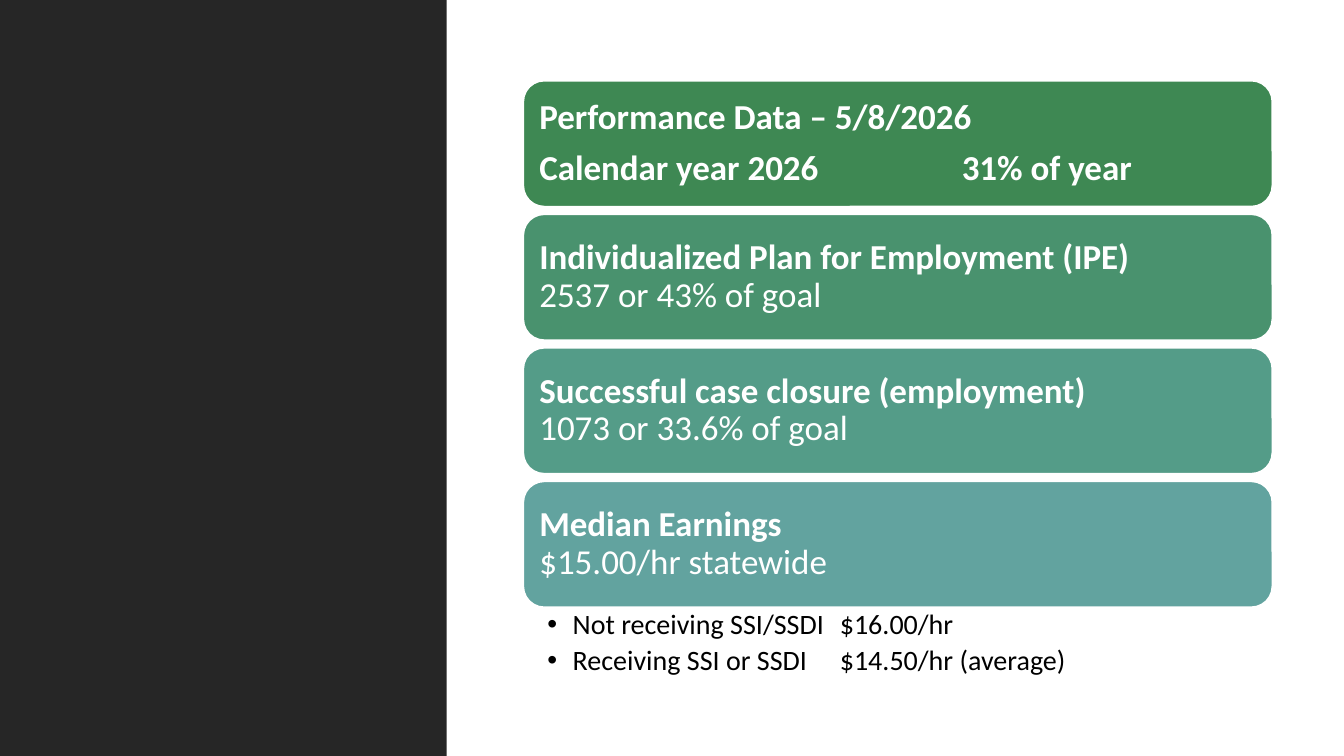
"""Build the performance data slide with its four stacked result cards."""
from dataclasses import dataclass

from lxml import etree
from pptx import Presentation
from pptx.dml.color import RGBColor
from pptx.enum.shapes import MSO_SHAPE as Preset
from pptx.enum.text import MSO_ANCHOR as Anchor, PP_ALIGN as Align
from pptx.oxml.ns import qn
from pptx.util import Inches, Pt

FONT = "Calibri"
WHITE, BLACK, CHARCOAL = "FFFFFF", "000000", "262626"
CARD_LEFT, CARD_TOP, CARD_WIDTH, CARD_HEIGHT = 5.19, 0.8, 7.43, 1.25
CARD_PITCH = 1.325


@dataclass(frozen=True)
class TextRun:
    text: str
    bold: bool = False


@dataclass(frozen=True)
class Card:
    fill: str
    paragraphs: list[list[TextRun]]


def result_card(fill: str, title: str, result: str) -> Card:
    return Card(fill, [[TextRun(title, True), TextRun("\v" + result)]])


CARDS = [
    Card("3E8853", [
        [TextRun("Performance Data – 5/8/2026", True)],
        [TextRun("Calendar year 2026\t31% of year", True)],
    ]),
    result_card("49926E", "Individualized Plan for Employment (IPE)", "2537 or 43% of goal"),
    result_card("549C88", "Successful case closure (employment)", "1073 or 33.6% of goal"),
    result_card("62A39F", "Median Earnings", "$15.00/hr statewide"),
]
EARNINGS = ["Not receiving SSI/SSDI\t$16.00/hr", "Receiving SSI or SSDI\t$14.50/hr (average)"]


def color(value: str) -> RGBColor:
    return RGBColor.from_string(value)


def add_block(slide, preset, left: float, top: float, width: float, height: float, fill: str):
    shape = slide.shapes.add_shape(
        preset, Inches(left), Inches(top), Inches(width), Inches(height))
    shape.shadow.inherit = False
    shape.fill.solid()
    shape.fill.fore_color.rgb = color(fill)
    shape.line.fill.background()
    return shape


def set_margins(frame, left: float, top: float, right: float, bottom: float) -> None:
    frame.word_wrap = True
    frame.margin_left, frame.margin_top = Inches(left), Inches(top)
    frame.margin_right, frame.margin_bottom = Inches(right), Inches(bottom)


def add_tab_stop(paragraph, position: float) -> None:
    tabs = etree.SubElement(paragraph._p.get_or_add_pPr(), qn("a:tabLst"))
    etree.SubElement(tabs, qn("a:tab"), pos=str(Inches(position)), algn="l")


def add_bullet(paragraph, indent: float) -> None:
    properties = paragraph._p.get_or_add_pPr()
    properties.set("marL", str(Inches(indent)))
    properties.set("indent", str(-Inches(indent)))
    etree.SubElement(properties, qn("a:buFont"), typeface="Arial")
    etree.SubElement(properties, qn("a:buChar"), char="•")


def fill_paragraph(paragraph, runs: list[TextRun], size: float, tint: str, after: float) -> None:
    paragraph.alignment = Align.LEFT
    paragraph.line_spacing = 0.9
    paragraph.space_after = Pt(after)
    for item in runs:
        if item.text.startswith("\v"):
            paragraph.add_line_break()
        run = paragraph.add_run()
        run.text = item.text.lstrip("\v")
        run.font.name, run.font.size, run.font.bold = FONT, Pt(size), item.bold
        run.font.color.rgb = color(tint)


def paragraph_at(frame, index: int):
    return frame.add_paragraph() if index else frame.paragraphs[0]


def add_card(slide, card: Card, top: float) -> None:
    shape = add_block(
        slide, Preset.ROUNDED_RECTANGLE, CARD_LEFT, top, CARD_WIDTH, CARD_HEIGHT, card.fill)
    shape.line.color.rgb = color(WHITE)
    shape.line.width = Pt(1.25)
    frame = shape.text_frame
    set_margins(frame, 0.1, 0.1, 0.1, 0.1)
    frame.vertical_anchor = Anchor.MIDDLE
    for index, runs in enumerate(card.paragraphs):
        paragraph = paragraph_at(frame, index)
        fill_paragraph(paragraph, runs, 25, WHITE, 8.75)
        if any("\t" in item.text for item in runs):
            add_tab_stop(paragraph, 4.19)


def add_earnings(slide, top: float) -> None:
    box = slide.shapes.add_textbox(
        Inches(CARD_LEFT), Inches(top), Inches(CARD_WIDTH), Inches(0.75))
    set_margins(box.text_frame, 0.24, 0.03, 0.19, 0.03)
    for index, text in enumerate(EARNINGS):
        paragraph = paragraph_at(box.text_frame, index)
        fill_paragraph(paragraph, [TextRun(text)], 20, BLACK, 4)
        add_bullet(paragraph, 0.25)
        add_tab_stop(paragraph, 2.9)


def main() -> None:
    presentation = Presentation()
    presentation.slide_width, presentation.slide_height = Inches(13.33), Inches(7.5)
    slide = presentation.slides.add_slide(presentation.slide_layouts[6])
    slide.background.fill.solid()
    slide.background.fill.fore_color.rgb = color(WHITE)
    add_block(slide, Preset.RECTANGLE, 0, 0, 4.43, 7.5, CHARCOAL)
    for index, card in enumerate(CARDS):
        add_card(slide, card, CARD_TOP + index * CARD_PITCH)
    add_earnings(slide, CARD_TOP + 3 * CARD_PITCH + CARD_HEIGHT)
    presentation.save("out.pptx")


if __name__ == "__main__":
    main()
